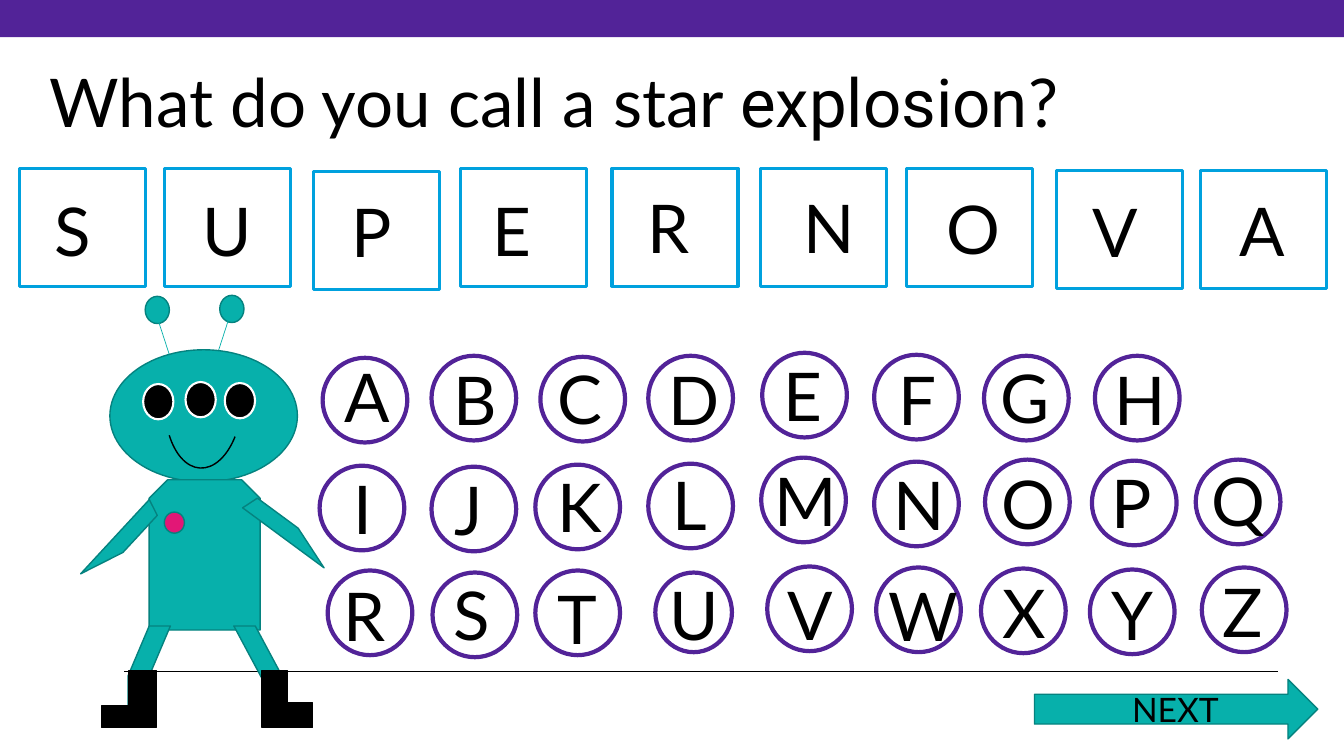
from pptx import Presentation
from pptx.dml.color import RGBColor
from pptx.enum.shapes import MSO_CONNECTOR, MSO_SHAPE
from pptx.enum.text import MSO_ANCHOR, MSO_AUTO_SIZE, PP_ALIGN
from pptx.oxml.ns import qn
from pptx.util import Inches, Pt
from lxml import etree

RECT, OVAL, ARC = MSO_SHAPE.RECTANGLE, MSO_SHAPE.OVAL, MSO_SHAPE.ARC
STRIPE, BOOT = MSO_SHAPE.DIAGONAL_STRIPE, MSO_SHAPE.CORNER
TORSO, ARROW = MSO_SHAPE.SNIP_2_SAME_RECTANGLE, MSO_SHAPE.RIGHT_ARROW
STRAIGHT = MSO_CONNECTOR.STRAIGHT

PURPLE, BLUE, TEAL, DARK_TEAL = "522398", "00A1DE", "07B0AB", "05827F"
WHITE, BLACK, PINK = "FFFFFF", "000000", "E21776"

TITLE = [("What do you call a star ", "Lato"), ("explosion", "Roboto"), ("?", "Lato")]

# letter, tile left, tile top, text left, text top
ANSWER = [
    ("S", 0.19, 1.67, 0.44, 1.83), ("U", 1.63, 1.67, 1.91, 1.83),
    ("P", 3.11, 1.70, 3.39, 1.84), ("E", 4.57, 1.67, 4.79, 1.83),
    ("R", 6.07, 1.67, 6.32, 1.80), ("N", 7.54, 1.67, 7.87, 1.80),
    ("O", 8.99, 1.67, 9.29, 1.81), ("V", 10.48, 1.69, 10.74, 1.84),
    ("A", 11.91, 1.69, 12.20, 1.83),
]
ALPHABET = [
    ("A", 3.20, 3.55, 3.32, 3.48), ("B", 4.28, 3.53, 4.40, 3.51),
    ("C", 5.36, 3.54, 5.43, 3.50), ("D", 6.43, 3.53, 6.53, 3.51),
    ("E", 7.56, 3.50, 7.67, 3.47), ("F", 8.67, 3.52, 8.81, 3.51),
    ("G", 9.76, 3.53, 9.82, 3.49), ("H", 10.86, 3.53, 10.96, 3.51),
    ("I", 3.17, 4.62, 3.41, 4.59), ("J", 4.28, 4.63, 4.41, 4.60),
    ("K", 5.31, 4.61, 5.43, 4.57), ("L", 6.43, 4.60, 6.57, 4.55),
    ("M", 7.55, 4.54, 7.58, 4.51), ("N", 8.67, 4.58, 8.76, 4.55),
    ("O", 9.77, 4.56, 9.83, 4.54), ("P", 10.83, 4.57, 10.93, 4.53),
    ("Q", 11.86, 4.56, 11.92, 4.51), ("R", 3.25, 5.66, 3.31, 5.65),
    ("S", 4.29, 5.68, 4.40, 5.64), ("T", 5.31, 5.66, 5.43, 5.68),
    ("U", 6.50, 5.68, 6.54, 5.64), ("V", 7.61, 5.62, 7.71, 5.64),
    ("W", 8.69, 5.63, 8.71, 5.65), ("X", 9.73, 5.64, 9.84, 5.62),
    ("Y", 10.81, 5.65, 10.93, 5.64), ("Z", 11.92, 5.63, 12.03, 5.61),
]
CIRCLE_SIZES = {"U": (0.76, 0.79)}

ANTENNA_TIPS = [(1.44, 2.94), (2.18, 2.93)]
ANTENNAE = [(1.57, 3.18, 1.69, 3.55), (2.28, 3.13, 2.16, 3.50)]
EYES = [(1.42, 3.81), (1.84, 3.79), (2.23, 3.80)]
# kind, box, rotation, flipped, adjustments
BODY = [
    (TORSO, (1.48, 4.76, 1.10, 1.49), 0, False, ()),
    (STRIPE, (0.67, 5.15, 0.94, 0.35), 153.2, False, ()),
    (STRIPE, (2.34, 5.16, 0.94, 0.35), 56.8, False, ()),
    (STRIPE, (1.27, 6.21, 0.42, 0.99), 0, False, ()),
    (STRIPE, (2.32, 6.21, 0.53, 0.99), 0, True, (0.6,)),
]
BOOTS = [
    (BOOT, (1.01, 6.65, 0.54, 0.57), 0, True, (0.4, 0.5)),
    (BOOT, (2.60, 6.65, 0.50, 0.57), 0, False, ()),
]
MOUTH = (ARC, (1.34, 3.58, 1.36, 0.77), 93, False, (189.99, 24.61))


def rgb(color):
    return RGBColor.from_string(color)


def add_shape(kind, box, rotation=0, flipped=False, adjustments=(),
              fill=None, line=None, width=1):
    sp = s.shapes.add_shape(kind, *map(Inches, box))
    sp.shadow.inherit = False
    sp.rotation = rotation
    if flipped:
        sp._element.spPr.find(qn("a:xfrm")).set("flipH", "1")
    for i, value in enumerate(adjustments):
        sp.adjustments[i] = value
    if fill:
        sp.fill.solid()
        sp.fill.fore_color.rgb = rgb(fill)
    else:
        sp.fill.background()
    if line:
        sp.line.color.rgb = rgb(line)
        sp.line.width = Pt(width)
    else:
        sp.line.fill.background()


def add_line(ends, color, width):
    c = s.shapes.add_connector(STRAIGHT, *map(Inches, ends))
    c.line.color.rgb = rgb(color)
    c.line.width = Pt(width)
    etree.SubElement(c._element.spPr, qn("a:effectLst"))


def add_run(p, text, size, font="Lato"):
    r = p.add_run()
    r.text = text
    r.font.size = Pt(size)
    r.font.name = font
    r.font.color.rgb = rgb(BLACK)


def add_text(text, box, size):
    tf = s.shapes.add_textbox(*map(Inches, box)).text_frame
    tf.word_wrap = True
    tf.auto_size = MSO_AUTO_SIZE.SHAPE_TO_FIT_TEXT
    add_run(tf.paragraphs[0], text, size)


prs = Presentation()
prs.slide_width, prs.slide_height = Inches(13.33), Inches(7.5)
s = prs.slides.add_slide(prs.slide_layouts[5])

add_shape(RECT, (0, 0, 13.33, 0.37), fill=PURPLE)
add_line((1.23, 6.66, 12.68, 6.66), BLACK, 0.75)

title = s.shapes.title
title.left, title.top, title.width, title.height = map(Inches, (0.39, 0.43, 12.14, 1.02))
tf = title.text_frame
tf.word_wrap = True
tf.auto_size = MSO_AUTO_SIZE.NONE
tf.vertical_anchor = MSO_ANCHOR.BOTTOM
p = tf.paragraphs[0]
p.alignment = PP_ALIGN.LEFT
for text, font in TITLE:
    add_run(p, text, 48, font)

for letter, x, y, text_x, text_y in ANSWER:
    add_shape(RECT, (x, y, 1.25, 1.17), fill=WHITE, line=BLUE, width=2.25)
    add_text(letter, (text_x, text_y, 0.67, 0.91), 48)

for letter, x, y, text_x, text_y in ALPHABET:
    size = CIRCLE_SIZES.get(letter, (0.84, 0.84))
    add_shape(OVAL, (x, y, *size), fill=WHITE, line=PURPLE, width=3)
    add_text(letter, (text_x, text_y, 0.75, 0.91), 48)

add_shape(ARROW, (10.26, 6.74, 2.81, 0.59), fill=TEAL, line=DARK_TEAL)
add_text("NEXT", (11.13, 6.79, 2, 0.5), 24)

for x, y in ANTENNA_TIPS:
    add_shape(OVAL, (x, y, 0.24, 0.27), fill=TEAL, line=DARK_TEAL)
for ends in ANTENNAE:
    add_line(ends, TEAL, 0.5)
add_shape(OVAL, (1.09, 3.47, 1.86, 1.31), fill=TEAL, line=DARK_TEAL)
add_shape(*MOUTH, line=BLACK)
for part in BODY:
    add_shape(*part, fill=TEAL, line=DARK_TEAL)
for boot in BOOTS:
    add_shape(*boot, fill=BLACK, line=BLACK)
for x, y in EYES:
    add_shape(OVAL, (x, y, 0.30, 0.35), fill=BLACK, line=WHITE, width=1.5)
add_shape(OVAL, (1.63, 5.08, 0.20, 0.21), fill=PINK, line=DARK_TEAL)

prs.save("out.pptx")
